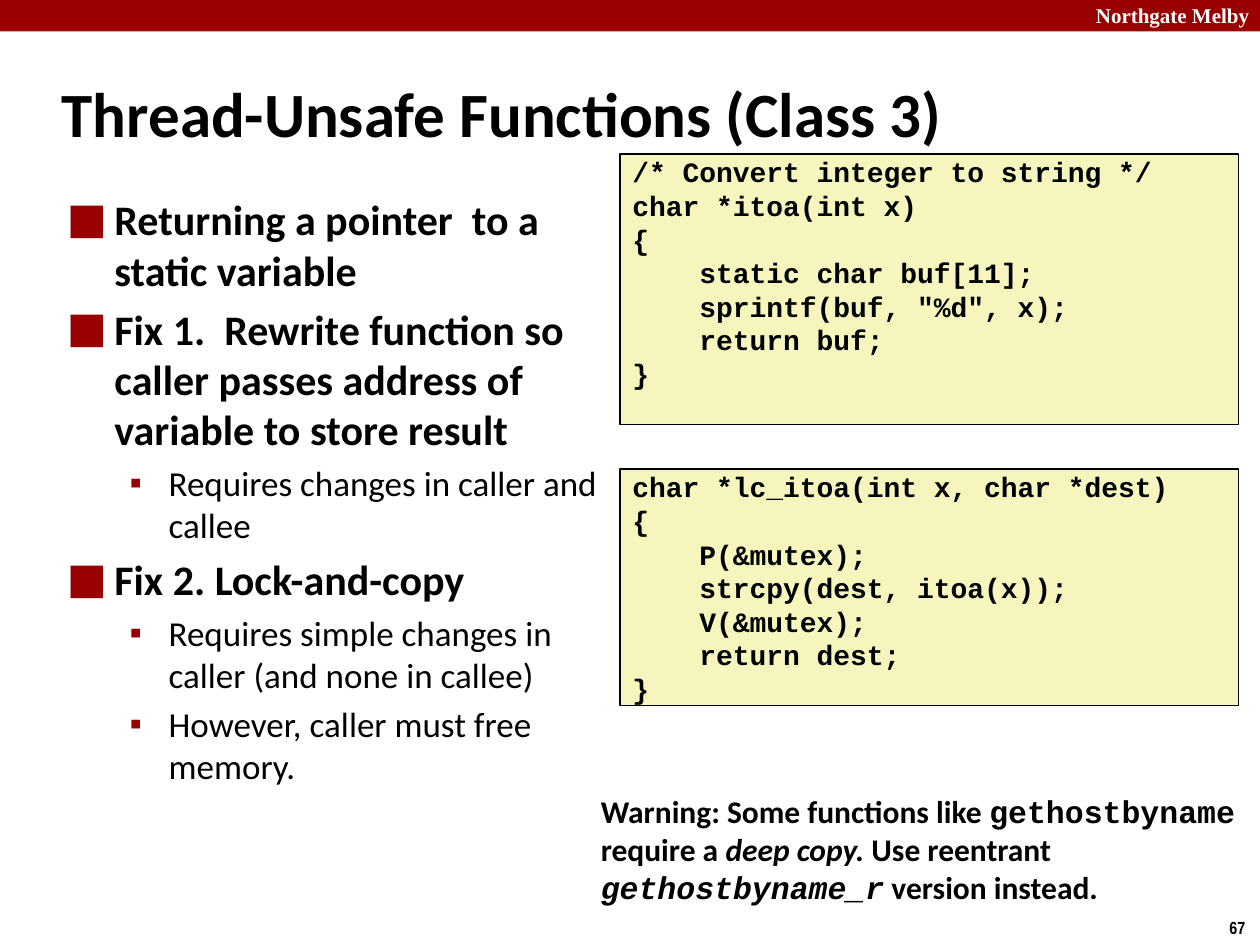
from lxml import etree
from pptx import Presentation, util as u
from pptx.dml.color import RGBColor
from pptx.enum import shapes, text
from pptx.oxml import ns

WIDTH, HEIGHT = 10, 7.5
COLORS = {"red": "990000", "cream": "F6F5BD", "black": "000000", "white": "FFFFFF"}
BULLETS = {
    0: dict(char="■", scale=160, margin=0.38, hang=0.38, size=24, bold=True, before=4.8),
    1: dict(char="▪", scale=100, margin=0.81, hang=0.31, size=20, bold=False, before=4),
}
POINTS = [
    (0, "Returning a pointer  to a static variable"),
    (0, "Fix 1.  Rewrite function so caller passes address of variable to store result"),
    (1, "Requires changes in caller and callee"),
    (0, "Fix 2. Lock-and-copy"),
    (1, "Requires simple changes in caller (and none in callee)"),
    (1, "However, caller must free memory."),
]
ITOA = """/* Convert integer to string */
char *itoa(int x)
{
    static char buf[11];
    sprintf(buf, "%d", x);
    return buf;
}"""
LC_ITOA = """char *lc_itoa(int x, char *dest)
{
    P(&mutex);
    strcpy(dest, itoa(x));
    V(&mutex);
    return dest;
}"""
WARNING = [
    ("Warning: Some functions like ", "Calibri", False),
    ("gethostbyname", "Courier New", False),
    (" require a ", "Calibri", False),
    ("deep copy. ", "Calibri", True),
    ("Use reentrant ", "Calibri", False),
    ("gethostbyname_r", "Courier New", True),
    (" version instead.", "Calibri", False),
]


def color(name):
    """Return the named colour."""
    return RGBColor.from_string(COLORS[name])


def inches(box):
    """Convert a box of inches to lengths."""
    return [u.Inches(value) for value in box]


def add_run(paragraph, words, size, font="Calibri", bold=True, italic=False, ink="black"):
    """Append one formatted run to a paragraph."""
    run = paragraph.add_run()
    run.text = words
    run.font.size = u.Pt(size)
    run.font.name = font
    run.font.bold = bold
    run.font.italic = italic
    run.font.color.rgb = color(ink)


def set_indent(paragraph, margin, hang):
    """Give a paragraph a hanging indent."""
    properties = paragraph._p.get_or_add_pPr()
    properties.set("marL", str(u.Inches(margin)))
    properties.set("indent", str(-u.Inches(hang)))
    return properties


def set_bullet(properties, char, scale):
    """Give a paragraph a red bullet, scaled in percent."""
    bullet_color = etree.SubElement(properties, ns.qn("a:buClr"))
    etree.SubElement(bullet_color, ns.qn("a:srgbClr")).set("val", COLORS["red"])
    etree.SubElement(properties, ns.qn("a:buSzPct")).set("val", str(scale * 1000))
    etree.SubElement(properties, ns.qn("a:buFont")).set("typeface", "Arial")
    etree.SubElement(properties, ns.qn("a:buChar")).set("char", char)


def add_text_frame(slide, box):
    """Add a wrapping text box and return its frame."""
    frame = slide.shapes.add_textbox(*inches(box)).text_frame
    frame.word_wrap = True
    return frame


def add_rectangle(slide, box, fill, line=None):
    """Add a flat rectangle."""
    shape = slide.shapes.add_shape(shapes.MSO_SHAPE.RECTANGLE, *inches(box))
    shape.shadow.inherit = False
    shape.fill.solid()
    shape.fill.fore_color.rgb = color(fill)
    if line:
        shape.line.color.rgb = color(line)
        shape.line.width = u.Pt(1)
    else:
        shape.line.fill.background()
    return shape


def add_header(slide, box):
    """Add the top band with the school's name at its right end."""
    left, top, width, height = box
    add_rectangle(slide, box, "red")
    label = add_text_frame(slide, (left + 0.86 * width, top - 0.03, 0.143 * width, height + 0.05))
    label.word_wrap = False
    add_run(label.paragraphs[0], "Northgate Melby", 12, "Times New Roman", ink="white")


def add_title(slide, box, words):
    """Place and format the title placeholder."""
    title = slide.shapes.title
    title.left, title.top, title.width, title.height = inches(box)
    frame = title.text_frame
    frame.vertical_anchor = text.MSO_ANCHOR.MIDDLE
    frame.auto_size = text.MSO_AUTO_SIZE.NONE
    paragraph = frame.paragraphs[0]
    paragraph.alignment = text.PP_ALIGN.LEFT
    set_indent(paragraph, 0.13, 0.13)
    add_run(paragraph, words, 36)


def add_points(slide, box, points):
    """Add the two-level bulleted list."""
    frame = add_text_frame(slide, box)
    for index, (level, words) in enumerate(points):
        style = BULLETS[level]
        paragraph = frame.add_paragraph() if index else frame.paragraphs[0]
        paragraph.level = level
        paragraph.space_before = u.Pt(style["before"] if index else 0)
        properties = set_indent(paragraph, style["margin"], style["hang"])
        set_bullet(properties, style["char"], style["scale"])
        add_run(paragraph, words, style["size"], bold=style["bold"])


def add_code(slide, box, code):
    """Add a code panel with one paragraph a line."""
    frame = add_rectangle(slide, box, "cream", "black").text_frame
    frame.word_wrap = True
    frame.vertical_anchor = text.MSO_ANCHOR.TOP
    frame.margin_top, frame.margin_bottom = u.Inches(0.01), 0
    for index, line in enumerate(code.splitlines()):
        paragraph = frame.add_paragraph() if index else frame.paragraphs[0]
        paragraph.alignment = text.PP_ALIGN.LEFT
        add_run(paragraph, line, 16, "Courier New")


def add_warning(slide, box, parts):
    """Add the warning in mixed fonts."""
    paragraph = add_text_frame(slide, box).paragraphs[0]
    for words, font, italic in parts:
        add_run(paragraph, words, 18, font, italic=italic)


def add_page_number(slide, box, number):
    """Add the page number."""
    frame = add_text_frame(slide, box)
    frame.word_wrap = False
    add_run(frame.paragraphs[0], number, 10, "Arial Narrow")


def main():
    """Build and save the slide."""
    presentation = Presentation()
    presentation.slide_width, presentation.slide_height = inches((WIDTH, HEIGHT))
    slide = presentation.slides.add_slide(presentation.slide_layouts[5])
    code_left, code_width = 0.492 * WIDTH, 0.491 * WIDTH
    add_header(slide, (0, 0, WIDTH, HEIGHT / 30))
    add_title(slide, (0.39, 0.48, 8.3, 0.83), "Thread-Unsafe Functions (Class 3)")
    add_points(slide, (0.43, 1.49, 4.65, 5.09), POINTS)
    add_code(slide, (code_left, 3.72, code_width, 1.88), LC_ITOA)
    add_warning(slide, (code_left - 0.25, 6.24, 5.33, 1.26), WARNING)
    add_code(slide, (code_left, 1.22, code_width, 2.15), ITOA)
    add_page_number(slide, (WIDTH - 0.34, HEIGHT - 0.27, 0.34, 0.27), "67")
    presentation.save("out.pptx")


if __name__ == "__main__":
    main()
